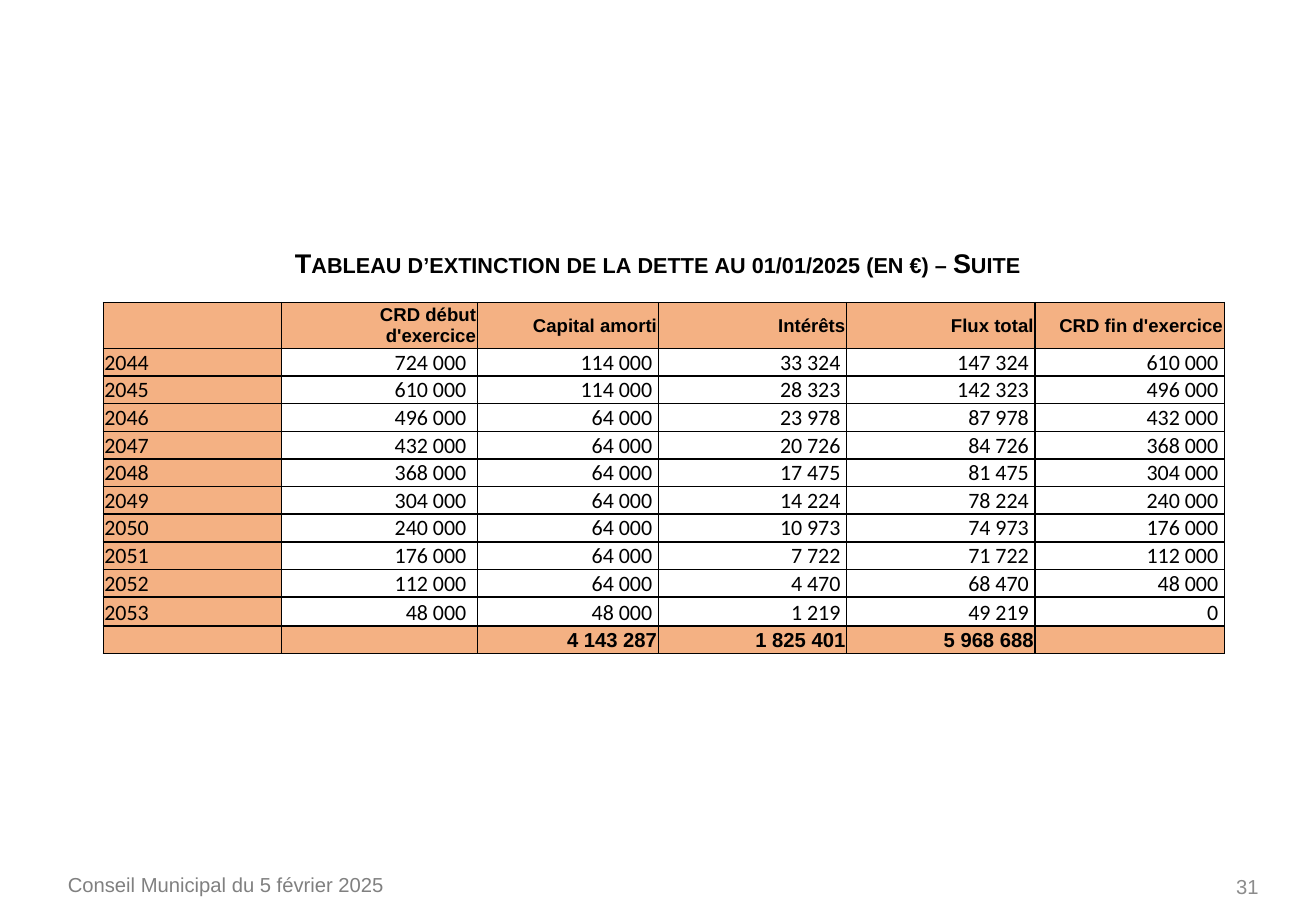
from dataclasses import dataclass

import pptx
import pptx.dml.color
import pptx.enum.text
import pptx.oxml
import pptx.oxml.ns
import pptx.util
from lxml import etree

Pt = pptx.util.Pt
ALIGN = pptx.enum.text.PP_ALIGN
ANCHOR = pptx.enum.text.MSO_ANCHOR


@dataclass(frozen=True)
class Theme:
    black: str = "000000"
    accent: str = "F4B183"
    footer: str = "808080"
    number: str = "8C8C8C"
    heading_font: str = "Arial"
    body_font: str = "Calibri"
    title_size: float = 16
    header_size: float = 11
    body_size: float = 13
    total_size: float = 12
    footer_size: float = 12


THEME = Theme()

HEADERS = ["", "CRD début d'exercice", "Capital amorti", "Intérêts",
           "Flux total", "CRD fin d'exercice"]
FIRST_YEAR = 2044
OPENING_DEBT = 724000
# Capital repaid and interest, year by year
PAYMENTS = [(114000, 33324), (114000, 28323), (64000, 23978), (64000, 20726),
            (64000, 17475), (64000, 14224), (64000, 10973), (64000, 7722),
            (64000, 4470), (48000, 1219)]
TOTALS = ["", "", "4 143 287", "1 825 401", "5 968 688", ""]

COLUMN_WIDTHS = [105.8, 115.9, 107.3, 111.6, 111.6, 112.3]
HEADER_HEIGHT, ROW_HEIGHT, LAST_ROW_HEIGHT = 27.2, 16.4, 17.1


def amount(n):
    return f"{n:,}".replace(",", " ")


def debt_rows():
    """Return the year rows; each closing debt opens the next year."""
    rows, debt = [], OPENING_DEBT
    for year, (capital, interest) in enumerate(PAYMENTS, FIRST_YEAR):
        values = (debt, capital, interest, capital + interest, debt - capital)
        rows.append([str(year)] + [amount(v) for v in values])
        debt -= capital
    return rows


def write(tf, text, *, size, color=THEME.black, font=THEME.heading_font,
          bold=False, align=ALIGN.LEFT, anchor=ANCHOR.TOP, spacing=None,
          small_caps=False):
    tf.word_wrap = True
    tf.vertical_anchor = anchor
    p = tf.paragraphs[0]
    p.alignment = align
    if spacing:
        p.line_spacing = spacing
    if not text:
        end = etree.SubElement(p._p, pptx.oxml.ns.qn("a:endParaRPr"))
        end.set("sz", str(int(size * 100)))
        return
    r = p.add_run()
    r.text = text
    r.font.name = font
    r.font.size = Pt(size)
    r.font.bold = bold
    r.font.color.rgb = pptx.dml.color.RGBColor.from_string(color)
    if small_caps:
        r.font._element.set("cap", "small")


def add_text(slide, text, left, top, width, height, **fmt):
    sp = slide.shapes.add_textbox(Pt(left), Pt(top), Pt(width), Pt(height))
    write(sp.text_frame, text, **fmt)


def set_title(slide, text, left, top, width, height, **fmt):
    sp = slide.shapes.title
    sp.left, sp.top, sp.width, sp.height = map(Pt, (left, top, width, height))
    write(sp.text_frame, text, **fmt)


def add_borders(cell):
    tc_pr = cell._tc.get_or_add_tcPr()
    for side in "LRTB":
        tc_pr.append(pptx.oxml.parse_xml(
            f'<a:ln{side} {pptx.oxml.ns.nsdecls("a")} w="{Pt(1)}"><a:solidFill>'
            f'<a:srgbClr val="{THEME.black}"/></a:solidFill></a:ln{side}>'))


def fill_cell(cell, text, *, filled, left=0.7, right=0.7, **fmt):
    cell.margin_left, cell.margin_right = Pt(left), Pt(right)
    cell.margin_top, cell.margin_bottom = Pt(0.5), Pt(0)
    anchor = fmt.pop("anchor")
    write(cell.text_frame, text, **fmt)
    cell.vertical_anchor = anchor
    add_borders(cell)
    if filled:
        cell.fill.solid()
        cell.fill.fore_color.rgb = pptx.dml.color.RGBColor.from_string(THEME.accent)
    else:
        cell.fill.background()


def add_debt_table(slide, left, top):
    years = debt_rows()
    rows = [HEADERS, *years, TOTALS]
    heights = ([HEADER_HEIGHT] + [ROW_HEIGHT] * (len(years) - 1)
               + [LAST_ROW_HEIGHT, ROW_HEIGHT])
    table = slide.shapes.add_table(
        len(rows), len(HEADERS), Pt(left), Pt(top),
        Pt(sum(COLUMN_WIDTHS)), Pt(sum(heights))).table
    table.first_row = table.horz_banding = False
    for column, width in zip(table.columns, COLUMN_WIDTHS):
        column.width = Pt(width)
    for row, height in zip(table.rows, heights):
        row.height = Pt(height)

    header = dict(size=THEME.header_size, bold=True, align=ALIGN.RIGHT,
                  anchor=ANCHOR.MIDDLE, filled=True, left=6)
    total = {**header, "size": THEME.total_size}
    year = dict(size=THEME.body_size, font=THEME.body_font,
                anchor=ANCHOR.BOTTOM, filled=True)
    value = {**year, "align": ALIGN.RIGHT, "filled": False, "right": 3.7}
    opening = {**value, "right": 6.6}
    year_formats = [year, opening] + [value] * 4
    for i, texts in enumerate(rows):
        for j, text in enumerate(texts):
            if i == 0:
                fmt = header
            elif i == len(rows) - 1:
                fmt = total
            else:
                fmt = year_formats[j]
            fill_cell(table.cell(i, j), text, **fmt)


def main():
    prs = pptx.Presentation()
    prs.slide_width, prs.slide_height = Pt(780), Pt(540)
    slide = prs.slides.add_slide(prs.slide_layouts[5])
    set_title(slide, "Tableau d’extinction de la dette au 01/01/2025 (en €) – Suite",
              30.2, 145.4, 719.3, 23.8, size=THEME.title_size, bold=True,
              align=ALIGN.CENTER, anchor=ANCHOR.BOTTOM, spacing=0.9,
              small_caps=True)
    add_debt_table(slide, 61.2, 179.3)
    add_text(slide, "Conseil Municipal du 5 février 2025", 33.1, 513.4, 323.3, 28.8,
             size=THEME.footer_size, color=THEME.footer)
    add_text(slide, "31", 577.4, 511.2, 175.7, 28.8, size=THEME.footer_size,
             color=THEME.number, align=ALIGN.RIGHT, anchor=ANCHOR.MIDDLE)
    prs.save("out.pptx")


if __name__ == "__main__":
    main()
